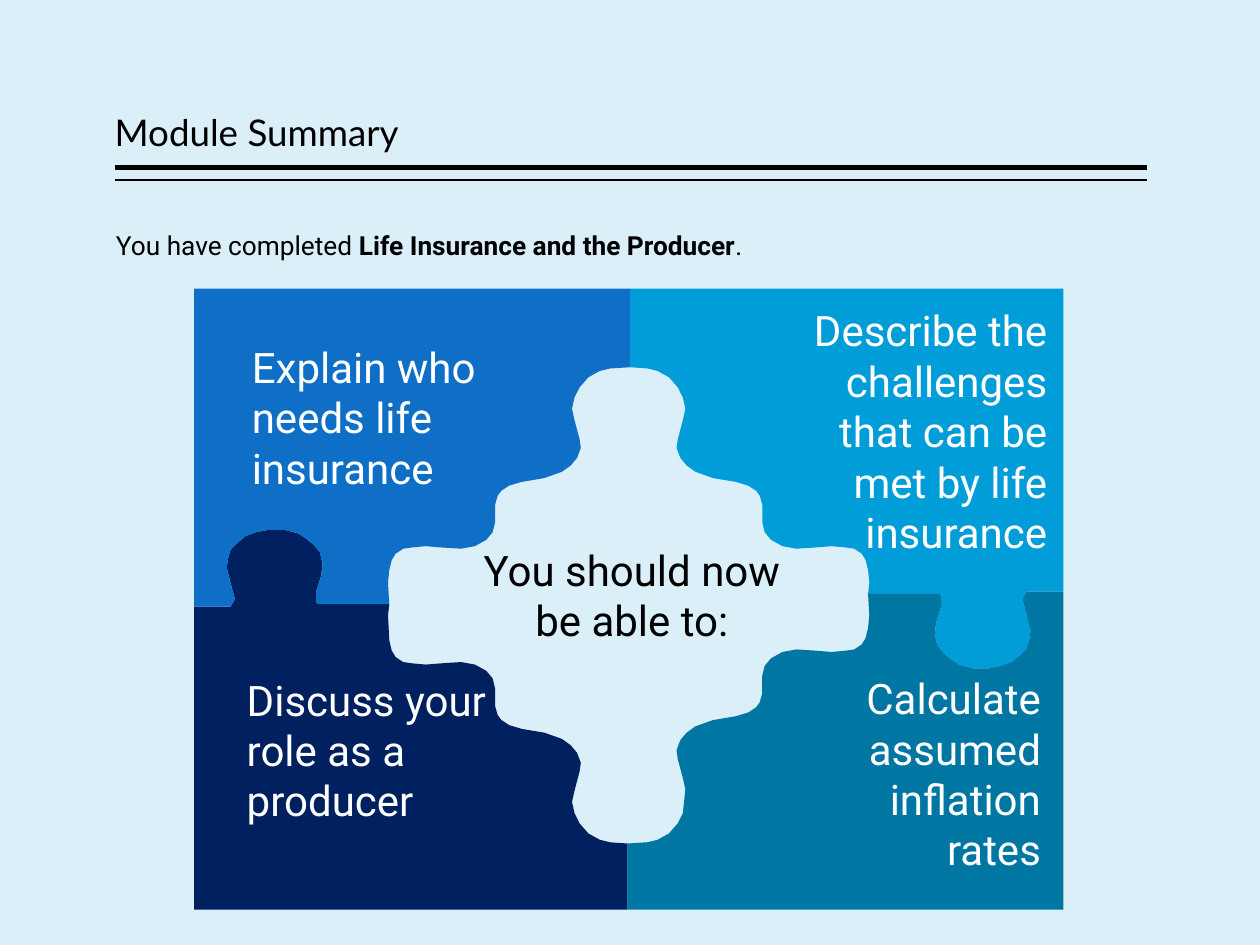
import pptx
import pptx.dml.color
import pptx.enum.shapes
import pptx.enum.text
import pptx.oxml
import pptx.util
from pptx.util import Inches

HEX = {"back": "DBEFF9", "ink": "000000", "white": "FFFFFF", "blue": "0F6FC6",
       "sky": "009DD9", "teal": "0076A3", "navy": "002060"}
ALIGN = pptx.enum.text.PP_ALIGN
EDGE = -0.06
SEAM = 0.01
DROP = 0.1
TAB = [(3.16, -0.06), (3.13, -0.01), (3.13, 0.02), (3.15, 0.09), (3.17, 0.17),
       (3.19, 0.25), (3.18, 0.32), (3.16, 0.39), (3.1, 0.45), (3.04, 0.5),
       (2.96, 0.53), (2.86, 0.55), (2.73, 0.55), (2.62, 0.52), (2.56, 0.48),
       (2.5, 0.43), (2.45, 0.37), (2.43, 0.28), (2.44, 0.19), (2.48, 0.06),
       (2.48, -0.02), (2.47, -0.04), (1.9, -0.04)]
CURVE = [(1.91, 0.13), (1.9, 0.23), (1.88, 0.31), (1.85, 0.36), (1.79, 0.4),
         (1.72, 0.41), (1.61, 0.42), (1.49, 0.41), (1.33, 0.4), (1.22, 0.42),
         (1.13, 0.47), (1.08, 0.53), (1.06, 0.61), (1.06, 0.75), (1.04, 0.82),
         (1.01, 0.86), (0.95, 0.9), (0.85, 0.93), (0.67, 0.96), (0.53, 1.01),
         (0.46, 1.06), (0.41, 1.12), (0.38, 1.2), (0.39, 1.27), (0.43, 1.42),
         (0.45, 1.51), (0.43, 1.6), (0.39, 1.68), (0.32, 1.76), (0.23, 1.81),
         (0.15, 1.83)]
PEAK = 1.84


def tint(name):
    """Return the named colour."""
    return pptx.dml.color.RGBColor.from_string(HEX[name])


def style(run, size, face, color, bold=False):
    """Format one run of text."""
    font = run.font
    font.size, font.name, font.bold = pptx.util.Pt(size), face, bold
    font.color.rgb = tint(color)


def head(slide, left, top, width, height):
    """Place the title and the double rule below it."""
    title = slide.shapes.title
    title.left, title.top = Inches(left), Inches(top)
    title.width, title.height = Inches(width), Inches(height)
    frame = title.text_frame
    frame.text = "Module Summary"
    frame.margin_left = frame.margin_right = 0
    frame.vertical_anchor = pptx.enum.text.MSO_ANCHOR.BOTTOM
    para = frame.paragraphs[0]
    para.alignment, para.line_spacing = ALIGN.LEFT, 0.9
    style(para.runs[0], 21, "Lato", "ink")
    for gap, weight in ((0.05, 3), (0.15, 1)):
        level = Inches(top + height + gap)
        rule = slide.shapes.add_connector(
            pptx.enum.shapes.MSO_CONNECTOR.STRAIGHT,
            Inches(left + width), level, Inches(left), level)
        rule.line.color.rgb = tint("ink")
        rule.line.width = pptx.util.Pt(weight)
        props = rule._element.spPr
        props.append(pptx.oxml.parse_xml(
            '<a:effectLst xmlns:a="http://schemas.openxmlformats.org/drawingml/2006/main"/>'))


def intro(slide, left, top, width, height):
    """Place the sentence that names the finished module."""
    box = slide.shapes.add_textbox(
        Inches(left), Inches(top), Inches(width), Inches(height))
    frame = box.text_frame
    frame.word_wrap = True
    frame.margin_left = frame.margin_right = 0
    para = frame.paragraphs[0]
    para.line_spacing = 0.9
    parts = (("You have completed ", False),
             ("Life Insurance and the Producer", True), (".", False))
    for text, bold in parts:
        run = para.add_run()
        run.text = text
        style(run, 15, "Roboto", "ink", bold)


def piece(slide, mid, half, side, level, start, color):
    """Draw a puzzle piece; its curve moves outward beyond the start."""
    wide, high = half
    seam = -SEAM * level
    bulge = [(side * u, level * (v + (DROP if v > start else 0)))
             for u, v in CURVE]
    peak = PEAK + (DROP if PEAK > start else 0)
    spots = [(seam, level * high), (side * wide, level * high),
             (side * wide, side * EDGE)]
    spots += [(side * u, side * v) for u, v in TAB]
    spots += bulge + [(seam, level * peak)]
    spots = [(Inches(mid[0] + x), Inches(mid[1] + y)) for x, y in spots]
    path = slide.shapes.build_freeform(*spots[0])
    path.add_line_segments(spots[1:], close=True)
    shape = path.convert_to_shape()
    shape.shadow.inherit = False
    shape.fill.solid()
    shape.fill.fore_color.rgb = tint(color)
    shape.line.fill.background()


def label(slide, left, top, width, height, text, align, color="white"):
    """Place one large label."""
    box = slide.shapes.add_textbox(
        Inches(left), Inches(top), Inches(width), Inches(height))
    frame = box.text_frame
    frame.word_wrap = True
    frame.auto_size = pptx.enum.text.MSO_AUTO_SIZE.SHAPE_TO_FIT_TEXT
    frame.text = text
    frame.paragraphs[0].alignment = align
    style(frame.paragraphs[0].runs[0], 24, "Roboto", color)


def puzzle(slide, left, top, width, height):
    """Place the four pieces and their labels."""
    half = width / 2, height / 2
    mid = left + half[0], top + half[1]
    for side, level, start, color in (
            (1, -1, 2, "sky"), (1, 1, 1.55, "teal"),
            (-1, 1, 0.15, "navy"), (-1, -1, 2, "blue")):
        piece(slide, mid, half, side, level, start, color)
    for x, y, wide, high, text, *look in (
            (2.17, 1.98, 2.61, 1.31, "You should now be able to:", ALIGN.CENTER, "ink"),
            (0.36, 0.37, 2.11, 1.72, "Explain who needs life insurance", ALIGN.LEFT),
            (4.46, 0.08, 2.41, 2.12,
             "Describe the challenges that can be met by life insurance", ALIGN.RIGHT),
            (0.32, 3.01, 2.11, 1.31, "Discuss your role as a producer", ALIGN.LEFT),
            (4.71, 3, 2.11, 1.72, "Calculate assumed inflation rates", ALIGN.RIGHT)):
        label(slide, left + x, top + y, wide, high, text, *look)


def main():
    """Build and save the slide."""
    deck = pptx.Presentation()
    deck.slide_width, deck.slide_height = Inches(10), Inches(7.5)
    slide = deck.slides.add_slide(deck.slide_layouts[5])
    slide.background.fill.solid()
    slide.background.fill.fore_color.rgb = tint("back")
    head(slide, 0.91, 0.08, 8.19, 1.2)
    intro(slide, 0.92, 1.8, 8.19, 0.4)
    puzzle(slide, 1.54, 2.29, 6.9, 4.93)
    deck.save("out.pptx")


if __name__ == "__main__":
    main()
